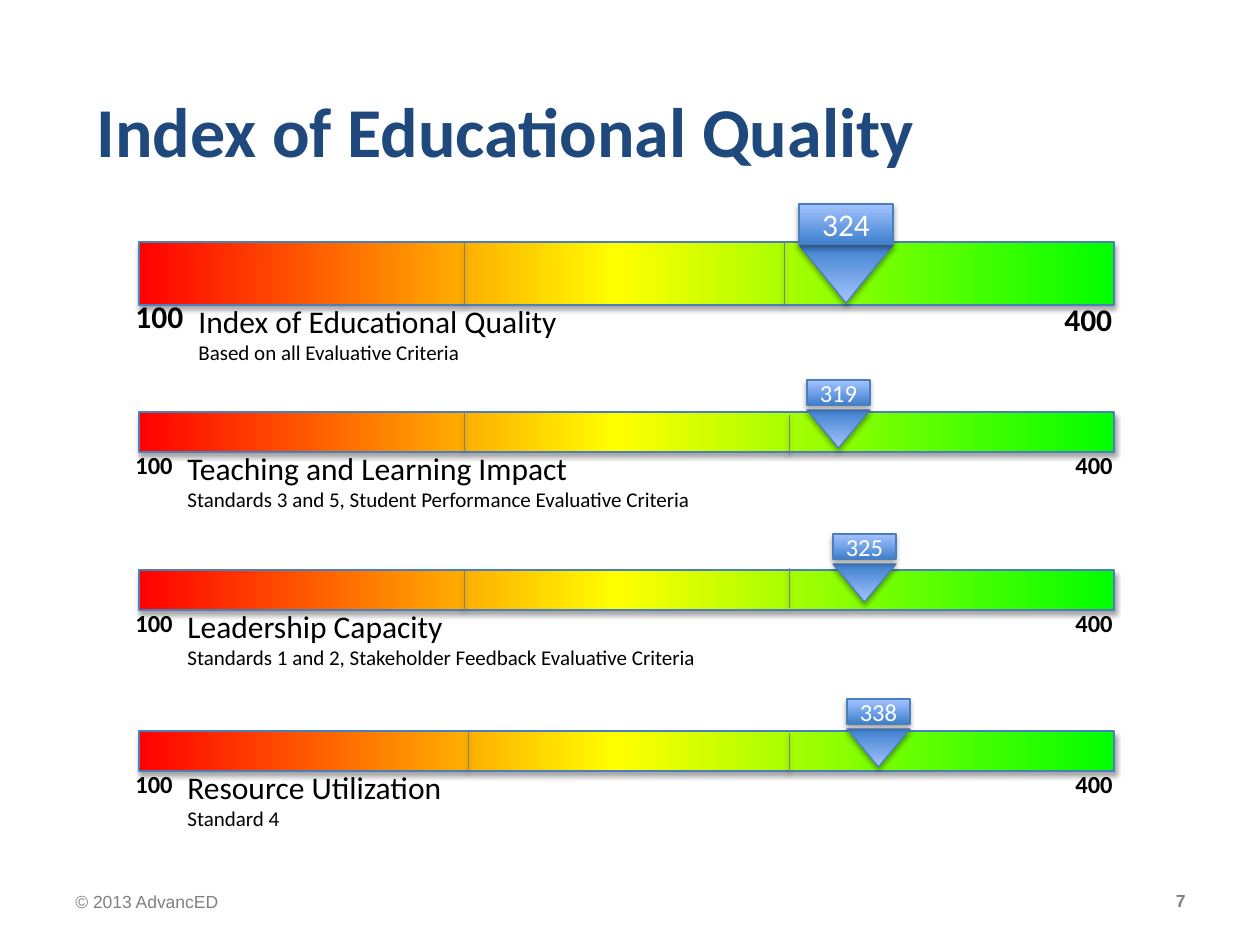
from dataclasses import dataclass

from lxml.etree import SubElement
from pptx import Presentation
from pptx.dml.color import RGBColor
from pptx.enum.shapes import MSO_CONNECTOR as Connector, MSO_SHAPE as Preset
from pptx.enum.text import MSO_ANCHOR as Anchor, MSO_AUTO_SIZE as AutoSize, PP_ALIGN as Align
from pptx.oxml import parse_xml
from pptx.oxml.ns import nsdecls, qn
from pptx.util import Pt

EMU_PER_PX = 914400 / 126


@dataclass(frozen=True)
class Theme:
    font: str = "Calibri"
    footer_font: str = "Arial"
    heading: str = "1F497D"
    ink: str = "000000"
    on_pointer: str = "FFFFFF"
    grey: str = "808080"
    outline: str = "4B7EBC"
    scale: tuple = ((0, "FF0000"), (49, "FFFF00"), (100, "00FF00"))
    pointer: tuple = ((0, "3F80CE"), (100, "A4C4FF"))
    heading_size: int = 40
    large: int = 18
    medium: int = 14
    small: int = 12
    footer_size: int = 10


@dataclass(frozen=True)
class GaugeStyle:
    height: int
    size: int
    pointer_width: int
    value_height: int
    tip_offset: int
    tip_height: int
    end_width: int
    low_offset: int
    high_offset: int
    caption_left: int
    caption_offset: int


@dataclass(frozen=True)
class Divider:
    x: int
    offset: int


@dataclass(frozen=True)
class Gauge:
    name: str
    basis: str
    score: int
    top: int
    pointer_center: int
    pointer_top: int
    dividers: tuple[Divider, Divider]
    style: GaugeStyle


THEME = Theme()
BAR_LEFT, BAR_WIDTH = 139, 975
LOW_LEFT, HIGH_RIGHT = 123, 1126
OVERALL = GaugeStyle(63, THEME.large, 94, 40, 41, 58, 74, 49, 52, 186, 54)
DOMAIN = GaugeStyle(40, THEME.medium, 63, 25, 30, 38, 63, 32, 32, 175, 31)
GAUGES = (
    Gauge("Index of Educational Quality", "Based on all Evaluative Criteria",
          324, 242, 846, 204, (Divider(464, 0), Divider(784, -1)), OVERALL),
    Gauge("Teaching and Learning Impact",
          "Standards 3 and 5, Student Performance Evaluative Criteria",
          319, 412, 838, 380, (Divider(464, 0), Divider(789, 3)), DOMAIN),
    Gauge("Leadership Capacity",
          "Standards 1 and 2, Stakeholder Feedback Evaluative Criteria",
          325, 570, 864, 534, (Divider(464, 1), Divider(789, -2)), DOMAIN),
    Gauge("Resource Utilization", "Standard 4",
          338, 731, 878, 699, (Divider(468, 1), Divider(789, 2)), DOMAIN),
)


def px(length: int) -> int:
    return round(length * EMU_PER_PX)


def box(left: int, top: int, width: int, height: int) -> tuple[int, ...]:
    return tuple(map(px, (left, top, width, height)))


def write(paragraph, text: str, size: int, color: str, bold: bool = False,
          align=Align.LEFT, font: str = THEME.font) -> None:
    paragraph.text = text
    paragraph.alignment = align
    paragraph.font.name = font
    paragraph.font.size = Pt(size)
    paragraph.font.bold = bold
    paragraph.font.color.rgb = RGBColor.from_string(color)


def add_shadow(shape, alpha: int, distance: float) -> None:
    effects = SubElement(shape._element.spPr, qn("a:effectLst"))
    effects.append(parse_xml(
        f'<a:outerShdw {nsdecls("a")} blurRad="{Pt(3.1)}" dist="{Pt(distance)}" '
        f'dir="5400000" rotWithShape="0"><a:srgbClr val="000000">'
        f'<a:alpha val="{alpha * 1000}"/></a:srgbClr></a:outerShdw>'))


def add_gradient_shape(shapes, preset, bounds: tuple[int, ...], stops: tuple, angle: int):
    shape = shapes.add_shape(preset, *bounds)
    shape.line.color.rgb = RGBColor.from_string(THEME.outline)
    shape.line.width = Pt(0.75)
    shape.fill.background()
    properties = shape._element.spPr
    stop_xml = "".join(f'<a:gs pos="{position * 1000}"><a:srgbClr val="{color}"/></a:gs>'
                       for position, color in stops)
    properties.replace(properties.find(qn("a:noFill")), parse_xml(
        f'<a:gradFill {nsdecls("a")} rotWithShape="1"><a:gsLst>{stop_xml}</a:gsLst>'
        f'<a:lin ang="{angle * 60000}" scaled="0"/></a:gradFill>'))
    add_shadow(shape, 35, 1.8)
    return shape


def add_text_frame(slide, bounds: tuple[int, ...], wrap: bool = False):
    frame = slide.shapes.add_textbox(*bounds).text_frame
    frame.word_wrap = wrap
    return frame


def add_divider(slide, gauge: Gauge, divider: Divider) -> None:
    x, top = px(divider.x), gauge.top + divider.offset
    line = slide.shapes.add_connector(Connector.STRAIGHT, x, px(top),
                                      x, px(top + gauge.style.height))
    line.line.color.rgb = RGBColor.from_string(THEME.grey)
    line.line.width = Pt(0.5)
    add_shadow(line, 38, 1.6)


def add_pointer(slide, gauge: Gauge) -> None:
    style = gauge.style
    left = gauge.pointer_center - style.pointer_width // 2
    pointer = slide.shapes.add_group_shape().shapes
    tip = add_gradient_shape(
        pointer, Preset.ISOSCELES_TRIANGLE,
        box(left, gauge.pointer_top + style.tip_offset, style.pointer_width, style.tip_height),
        THEME.pointer, 270)
    tip.rotation = 180
    score = add_gradient_shape(
        pointer, Preset.RECTANGLE,
        box(left, gauge.pointer_top, style.pointer_width, style.value_height),
        THEME.pointer, 270).text_frame
    score.margin_top = score.margin_bottom = 0
    score.vertical_anchor = Anchor.MIDDLE
    write(score.paragraphs[0], str(gauge.score), style.size, THEME.on_pointer,
          align=Align.CENTER)


def add_gauge(slide, gauge: Gauge) -> None:
    style = gauge.style
    add_gradient_shape(slide.shapes, Preset.RECTANGLE,
                       box(BAR_LEFT, gauge.top, BAR_WIDTH, style.height), THEME.scale, 0)
    ends = (("100", LOW_LEFT, style.low_offset),
            ("400", HIGH_RIGHT - style.end_width, style.high_offset))
    for text, left, offset in ends:
        end = add_text_frame(slide, box(left, gauge.top + offset, style.end_width, 43))
        end.auto_size = AutoSize.SHAPE_TO_FIT_TEXT
        write(end.paragraphs[0], text, style.size, THEME.ink, bold=True)
    caption = add_text_frame(
        slide, box(style.caption_left, gauge.top + style.caption_offset, 660, 77), wrap=True)
    caption.auto_size = AutoSize.SHAPE_TO_FIT_TEXT
    write(caption.paragraphs[0], gauge.name, THEME.large, THEME.ink)
    write(caption.add_paragraph(), gauge.basis, THEME.small, THEME.ink)
    for divider in gauge.dividers:
        add_divider(slide, gauge, divider)
    add_pointer(slide, gauge)


def add_footer(slide, text: str, bounds: tuple[int, ...], align, bold: bool) -> None:
    footer = add_text_frame(slide, bounds, wrap=True)
    footer.vertical_anchor = Anchor.MIDDLE
    write(footer.paragraphs[0], text, THEME.footer_size, THEME.grey, bold, align,
          THEME.footer_font)


def main() -> None:
    deck = Presentation()
    deck.slide_width, deck.slide_height = px(1260), px(945)
    slide = deck.slides.add_slide(deck.slide_layouts[5])
    heading = slide.shapes.title
    heading.left, heading.top, heading.width, heading.height = box(84, 62, 1113, 136)
    heading.text_frame.auto_size = AutoSize.NONE
    heading.text_frame.vertical_anchor = Anchor.MIDDLE
    write(heading.text_frame.paragraphs[0], "Index of Educational Quality",
          THEME.heading_size, THEME.heading, bold=True)
    for gauge in GAUGES:
        add_gauge(slide, gauge)
    add_footer(slide, "© 2013 AdvancED", box(63, 877, 189, 50), Align.LEFT, False)
    add_footer(slide, "7", box(1110, 876, 88, 50), Align.RIGHT, True)
    deck.save("out.pptx")


if __name__ == "__main__":
    main()
